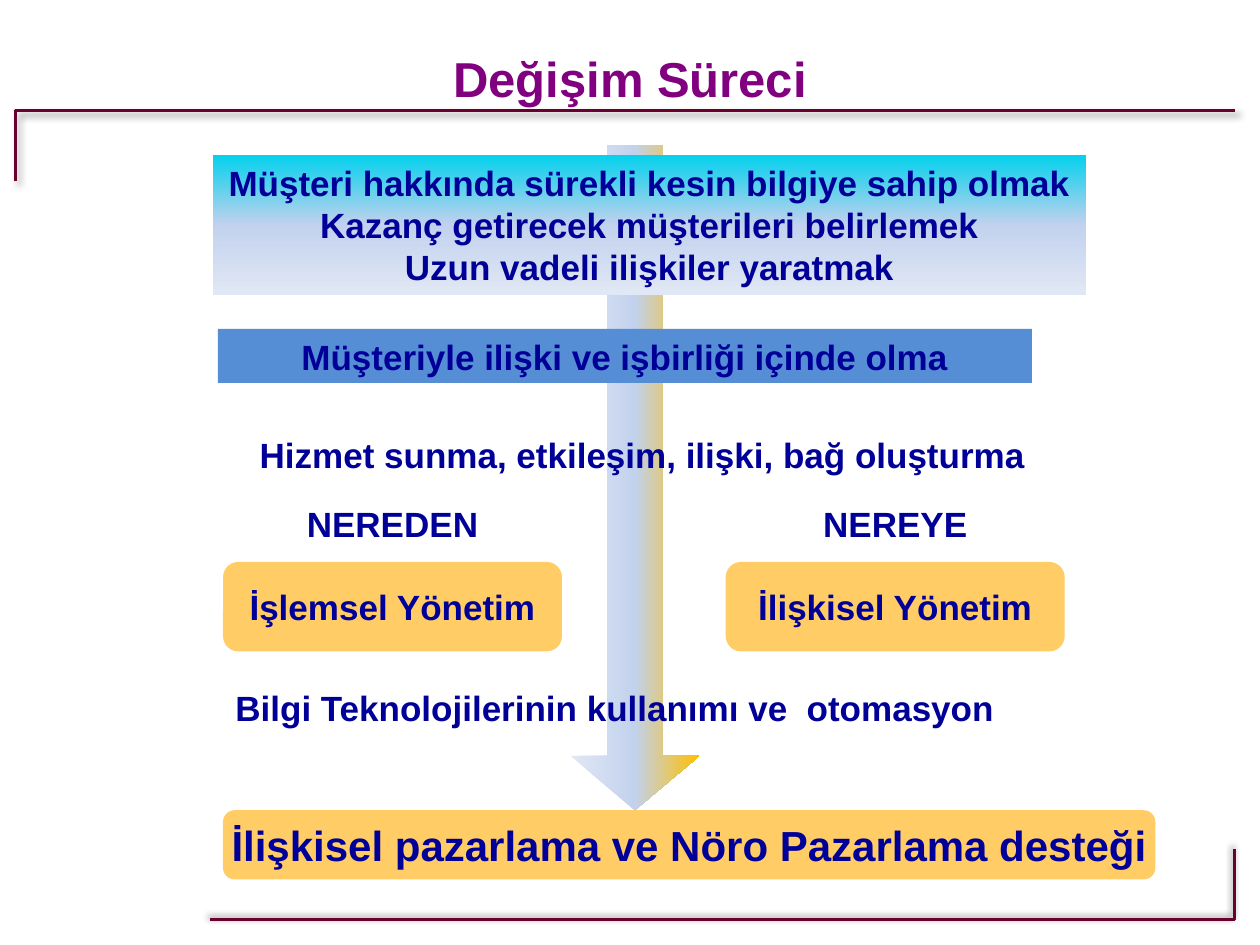
from lxml import etree
from pptx import Presentation
from pptx.dml.color import RGBColor
from pptx.enum.shapes import MSO_SHAPE
from pptx.enum.text import MSO_ANCHOR, PP_ALIGN
from pptx.oxml import parse_xml
from pptx.oxml.ns import nsdecls, qn
from pptx.util import Inches, Pt

COLORS = {
    "title": "800080", "text": "000099", "frame": "6A002D",
    "blue": "558ED5", "orange": "FFCC66", "cyan": "03D1ED",
    "gold": "FFC000", "mist": "C2D1ED", "pale": "E1E8F5", "shadow": "000000",
}


def color(name):
    return RGBColor.from_string(COLORS[name])


def set_gradient(shape, names, angle):
    """Fill with evenly spaced stops; angle runs counterclockwise."""
    shape.fill.gradient()
    shape.fill.gradient_angle = angle
    stops = shape.fill._fill._gradFill.find(qn("a:gsLst"))
    for stop in list(stops):
        stops.remove(stop)
    for index, name in enumerate(names):
        stop = etree.SubElement(stops, qn("a:gs"), pos=str(index * 100000 // (len(names) - 1)))
        etree.SubElement(stop, qn("a:srgbClr"), val=COLORS[name])


def add_outline(slide, contours, close):
    """Build one freeform from contours given in inches."""
    builder = slide.shapes.build_freeform(
        Inches(contours[0][0][0]), Inches(contours[0][0][1]), scale=1.0)
    for index, contour in enumerate(contours):
        points = [(Inches(x), Inches(y)) for x, y in contour]
        if index:
            builder.move_to(*points[0])
        builder.add_line_segments(points[1:], close=close)
    shape = builder.convert_to_shape()
    shape.shadow.inherit = False
    return shape


def write_text(shape, lines, size=20, name="text", align=PP_ALIGN.CENTER,
               anchor=MSO_ANCHOR.TOP, wrap=True):
    frame = shape.text_frame
    frame.word_wrap = wrap
    frame.vertical_anchor = anchor
    for index, line in enumerate(lines):
        paragraph = frame.add_paragraph() if index else frame.paragraphs[0]
        paragraph.alignment = align
        run = paragraph.add_run()
        run.text = line
        run.font.name = "Arial"
        run.font.size = Pt(size)
        run.font.bold = True
        run.font.color.rgb = color(name)


def add_label(slide, box, text, **style):
    label = slide.shapes.add_textbox(*map(Inches, box))
    write_text(label, [text], **style)
    return label


def add_panel(slide, box, lines, fill, kind=MSO_SHAPE.RECTANGLE, **style):
    panel = slide.shapes.add_shape(kind, *map(Inches, box))
    panel.shadow.inherit = False
    panel.line.fill.background()
    if isinstance(fill, str):
        panel.fill.solid()
        panel.fill.fore_color.rgb = color(fill)
    else:
        set_gradient(panel, fill, 270)
    write_text(panel, lines, **style)
    return panel


def add_rounded_panel(slide, box, text, size=20):
    panel = add_panel(slide, box, [text], "orange", MSO_SHAPE.ROUNDED_RECTANGLE,
                      size=size, anchor=MSO_ANCHOR.MIDDLE, wrap=False)
    panel.adjustments[0] = 0.17


def add_corner(slide, points, direction):
    """Corner rule with a soft shadow thrown in the given direction."""
    corner = add_outline(slide, [points], close=False)
    corner.fill.background()
    corner.line.color.rgb = color("frame")
    corner.line.width = Pt(1.75)
    effects = corner._element.spPr.find(qn("a:effectLst"))
    effects.append(parse_xml(
        f'<a:outerShdw {nsdecls("a")} blurRad="{Pt(4)}" dist="{Pt(3)}" '
        f'dir="{direction * 60000}" algn="ctr" rotWithShape="0">'
        f'<a:srgbClr val="{COLORS["shadow"]}"><a:alpha val="40000"/></a:srgbClr>'
        '</a:outerShdw>'))


def add_frame(slide, box):
    left, top, width, height = box
    right, bottom, arm = left + width, top + height, 0.56
    add_corner(slide, [(1.67, bottom), (right, bottom), (right, bottom - arm)], 225)
    add_corner(slide, [(right, top), (left, top), (left, top + arm)], 45)


def add_striped_arrow(slide, box):
    """Down arrow whose tail is cut into two stripes, in 32nds of its length."""
    left, top, width, height = box
    middle, right, tip = left + width / 2, left + width, top + height
    shaft_left, shaft_right = middle - 0.22, middle + 0.22
    neck, unit = tip - 0.43, height / 32

    def stripe(start, end):
        return [(shaft_right, top + start * unit), (shaft_left, top + start * unit),
                (shaft_left, top + end * unit), (shaft_right, top + end * unit)]

    body = [(right, neck), (shaft_right, neck), (shaft_right, top + 5 * unit),
            (shaft_left, top + 5 * unit), (shaft_left, neck), (left, neck), (middle, tip)]
    arrow = add_outline(slide, [body, stripe(2, 4), stripe(0, 1)], close=True)
    set_gradient(arrow, ["pale", "mist", "gold"], 0)
    arrow.line.fill.background()


def add_goals(slide, box):
    left, top, width, height = box
    add_panel(slide, (left, top, width, 1.11), [
        "Müşteri hakkında sürekli kesin bilgiye sahip olmak",
        "Kazanç getirecek müşterileri belirlemek",
        "Uzun vadeli ilişkiler yaratmak",
    ], ["cyan", "mist", "pale"], wrap=False)
    add_panel(slide, (left + 0.04, top + 1.38, 6.46, 0.43),
              ["Müşteriyle ilişki ve işbirliği içinde olma"], "blue")
    add_label(slide, (left + 0.24, top + 2.16, 6.34, 0.44),
              "Hizmet sunma, etkileşim, ilişki, bağ oluşturma")


def add_shift(slide, box):
    """Two columns: where the process starts and where it leads."""
    left, top, width, height = box
    column = 2.69
    columns = [("NEREDEN", "İşlemsel Yönetim"), ("NEREYE", "İlişkisel Yönetim")]
    for index, (heading, text) in enumerate(columns):
        x = left + index * (width - column)
        add_label(slide, (x, top, column, 0.43), heading)
        add_rounded_panel(slide, (x, top + 0.52, column, height - 0.52), text)


def add_result(slide, box):
    left, top, width, height = box
    add_label(slide, (left, top, 6.54, 0.44),
              "Bilgi Teknolojilerinin kullanımı ve  otomasyon", align=PP_ALIGN.LEFT)
    add_rounded_panel(slide, (left, top + 1.03, width, height - 1.03),
                      "İlişkisel pazarlama ve Nöro Pazarlama desteği", size=24)


def add_title(slide, box):
    title = add_label(slide, box, "Değişim Süreci", size=28, name="title")
    title.text_frame.paragraphs[0].line_spacing = 1.2


def main():
    presentation = Presentation()
    presentation.slide_width, presentation.slide_height = Inches(10), Inches(7.5)
    slide = presentation.slides.add_slide(presentation.slide_layouts[6])
    add_frame(slide, (0.12, 0.88, 9.68, 6.42))
    add_striped_arrow(slide, (4.53, 1.15, 1.02, 5.28))
    add_goals(slide, (1.69, 1.23, 6.93, 2.6))
    add_shift(slide, (1.77, 3.94, 6.68, 1.23))
    add_result(slide, (1.77, 5.4, 7.4, 1.58))
    add_title(slide, (0, 0.24, 10, 0.61))
    presentation.save("out.pptx")


if __name__ == "__main__":
    main()
